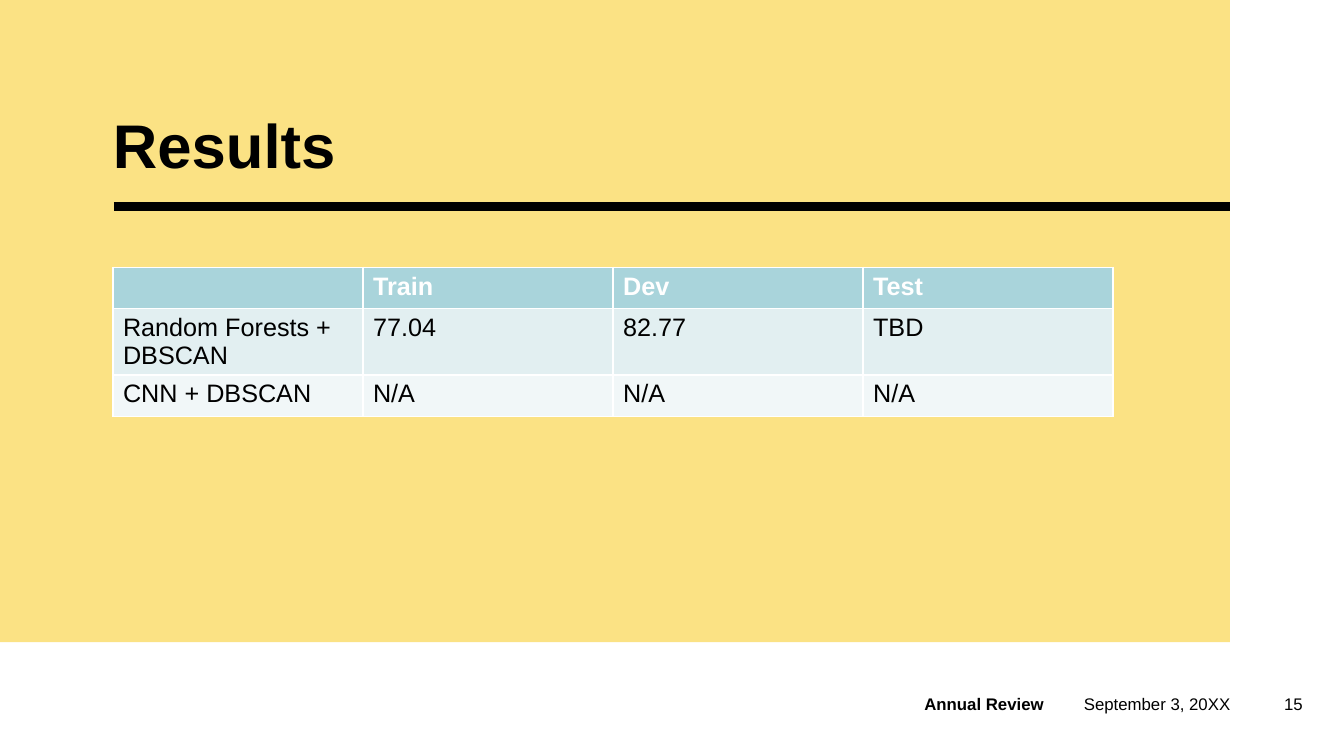
from dataclasses import dataclass

from lxml.etree import SubElement
from pptx import Presentation
from pptx.dml.color import RGBColor
from pptx.enum.shapes import MSO_CONNECTOR, MSO_SHAPE
from pptx.enum.text import MSO_ANCHOR, PP_ALIGN
from pptx.oxml.ns import qn
from pptx.util import Inches, Pt


@dataclass(frozen=True)
class Theme:
    font: str = "Arial"
    ink: str = "000000"
    panel: str = "FBE284"
    header_text: str = "FFFFFF"
    header_fill: str = "A9D4DB"
    row_fills: tuple = ("E2EFF1", "F1F7F8")
    title_size: int = 44
    table_size: int = 18
    footer_size: int = 12
    rule_width: int = 6


class ResultsSlide:
    """Draws themed elements on one title-only slide."""

    def __init__(self, deck, theme):
        self.theme = theme
        self.slide = deck.slides.add_slide(deck.slide_layouts[5])
        self.shapes = self.slide.shapes

    def style(self, paragraph, size, color=None, bold=False):
        font = paragraph.font
        font.name = self.theme.font
        font.size = Pt(size)
        font.bold = bold
        font.color.rgb = RGBColor.from_string(color or self.theme.ink)

    def panel(self, left, top, width, height):
        panel = self.shapes.add_shape(
            MSO_SHAPE.RECTANGLE, Inches(left), Inches(top), Inches(width), Inches(height))
        panel.shadow.inherit = False
        panel.fill.solid()
        panel.fill.fore_color.rgb = RGBColor.from_string(self.theme.panel)
        panel.line.fill.background()
        self.shapes.title.element.addprevious(panel.element)

    def rule(self, left, right, y):
        rule = self.shapes.add_connector(
            MSO_CONNECTOR.STRAIGHT, Inches(left), Inches(y), Inches(right), Inches(y))
        rule.line.color.rgb = RGBColor.from_string(self.theme.ink)
        rule.line.width = Pt(self.theme.rule_width)
        SubElement(rule.element.spPr, qn("a:effectLst"))

    def title(self, text, left, top, width, height):
        title = self.shapes.title
        title.left, title.top = Inches(left), Inches(top)
        title.width, title.height = Inches(width), Inches(height)
        frame = title.text_frame
        frame.text = text
        frame.word_wrap = True
        frame.vertical_anchor = MSO_ANCHOR.BOTTOM
        frame.margin_left = frame.margin_right = frame.margin_top = frame.margin_bottom = 0
        heading = frame.paragraphs[0]
        heading.alignment = PP_ALIGN.LEFT
        heading.line_spacing = 0.9
        self.style(heading, self.theme.title_size, bold=True)

    def table(self, rows, left, top, column_width, row_height):
        columns = len(rows[0])
        table = self.shapes.add_table(
            len(rows), columns, Inches(left), Inches(top),
            Inches(column_width * columns), Inches(row_height * len(rows))).table
        theme = self.theme
        fills = (theme.header_fill, *theme.row_fills)
        for r, (values, fill) in enumerate(zip(rows, fills)):
            is_header = r == 0
            for c, value in enumerate(values):
                cell = table.cell(r, c)
                cell.text = value
                cell.fill.solid()
                cell.fill.fore_color.rgb = RGBColor.from_string(fill)
                self.style(cell.text_frame.paragraphs[0], theme.table_size,
                           theme.header_text if is_header else theme.ink, is_header)

    def footer(self, text, left, width, inset=0.1, bold=False, align=PP_ALIGN.LEFT):
        footer = self.shapes.add_textbox(
            Inches(left), Inches(6.88), Inches(width), Inches(0.2))
        frame = footer.text_frame
        frame.text = text
        frame.word_wrap = True
        frame.vertical_anchor = MSO_ANCHOR.MIDDLE
        frame.margin_left = frame.margin_right = Inches(inset)
        frame.paragraphs[0].alignment = align
        self.style(frame.paragraphs[0], self.theme.footer_size, bold=bold)


def main():
    deck = Presentation()
    deck.slide_width, deck.slide_height = Inches(13.33), Inches(7.5)
    results = ResultsSlide(deck, Theme())
    results.panel(0, 0, 12.2, 6.37)
    results.rule(1.13, 12.2, 2.05)
    results.title("Results", 1.12, 1.09, 11.04, 0.71)
    scores = [
        ("", "Train", "Dev", "Test"),
        ("Random Forests + DBSCAN", "77.04", "82.77", "TBD"),
        ("CNN + DBSCAN", "N/A", "N/A", "N/A"),
    ]
    results.table(scores, 1.12, 2.65, 2.48, 0.41)
    results.footer("September 3, 20XX", 10.75, 1.67, inset=0)
    results.footer("Annual Review", 9.07, 1.6, bold=True)
    results.footer("15", 12.57, 0.45, align=PP_ALIGN.RIGHT)
    deck.save("out.pptx")


if __name__ == "__main__":
    main()
